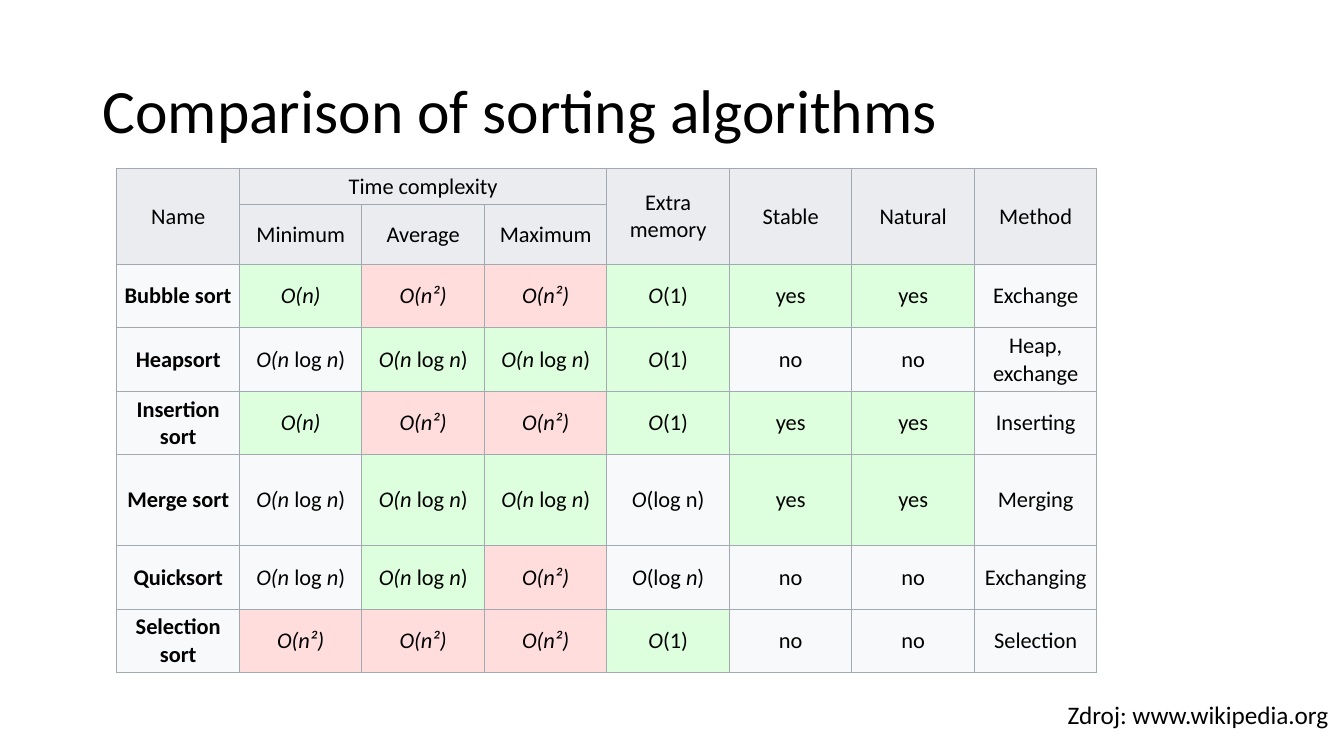
from dataclasses import dataclass

from lxml.etree import SubElement
from pptx import Presentation
from pptx.dml.color import RGBColor
from pptx.enum.text import MSO_ANCHOR as Anchor, PP_ALIGN as Align
from pptx.oxml.ns import qn
from pptx.slide import Slide
from pptx.table import Table, _Cell as Cell
from pptx.text.text import _Paragraph as Paragraph
from pptx.util import Inches, Pt

FONT = "Calibri"
BLACK = RGBColor(0x00, 0x00, 0x00)
BORDER = RGBColor(0xA2, 0xA9, 0xB1)
HEADER = RGBColor(0xEA, 0xEC, 0xF0)
PLAIN = RGBColor(0xF8, 0xF9, 0xFA)
GOOD = RGBColor(0xDD, 0xFF, 0xDD)
BAD = RGBColor(0xFF, 0xDD, 0xDD)

# Asterisks enclose italic text.
CONSTANT = "*O*(1)"
LINEAR = "*O(n)*"
LOGLINEAR = "*O(n* log *n*)"
QUADRATIC = "*O(n²)*"


@dataclass(frozen=True)
class Algorithm:
    name: str
    minimum: str
    average: str
    maximum: str
    memory: str
    stable: str
    natural: str
    method: str
    height: float = 0.63

    def entries(self) -> list[str]:
        return [self.name, self.minimum, self.average, self.maximum,
                self.memory, self.stable, self.natural, self.method]


@dataclass(frozen=True)
class Heading:
    text: str
    row: int
    column: int
    last_row: int
    last_column: int


ALGORITHMS = [
    Algorithm("Bubble sort", LINEAR, QUADRATIC, QUADRATIC, CONSTANT, "yes", "yes", "Exchange"),
    Algorithm("Heapsort", LOGLINEAR, LOGLINEAR, LOGLINEAR, CONSTANT, "no", "no", "Heap, exchange"),
    Algorithm("Insertion sort", LINEAR, QUADRATIC, QUADRATIC, CONSTANT, "yes", "yes", "Inserting"),
    Algorithm("Merge sort", LOGLINEAR, LOGLINEAR, LOGLINEAR, "*O*(log n)", "yes", "yes", "Merging", 0.9),
    Algorithm("Quicksort", LOGLINEAR, LOGLINEAR, QUADRATIC, "*O*(log *n*)", "no", "no", "Exchanging"),
    Algorithm("Selection sort", QUADRATIC, QUADRATIC, QUADRATIC, CONSTANT, "no", "no", "Selection"),
]
TALL_HEADINGS = {0: "Name", 4: "Extra memory", 5: "Stable", 6: "Natural", 7: "Method"}
HEADINGS = [Heading(text, 0, column, 1, column) for column, text in TALL_HEADINGS.items()]
HEADINGS += [Heading("Time complexity", 0, 1, 0, 3)]
HEADINGS += [Heading(text, 1, column, 1, column)
             for column, text in enumerate(("Minimum", "Average", "Maximum"), 1)]
HEADER_HEIGHTS = [0.36, 0.36]
COLUMN_COUNT = 8
TABLE_WIDTH = 9.72


def write_marked(paragraph: Paragraph, text: str, size: float, bold: bool = False) -> None:
    """Write text with the parts between asterisks in italics."""
    for index, part in enumerate(text.split("*")):
        if part:
            run = paragraph.add_run()
            run.text = part
            run.font.name, run.font.size = FONT, Pt(size)
            run.font.color.rgb = BLACK
            run.font.bold, run.font.italic = bold, index % 2 == 1


def format_cell(cell: Cell, fill: RGBColor) -> None:
    cell.vertical_anchor = Anchor.MIDDLE
    cell.margin_left = cell.margin_right = Inches(0.06)
    cell.margin_top = cell.margin_bottom = Inches(0.03)
    properties = cell._tc.get_or_add_tcPr()
    for side in ("lnL", "lnR", "lnT", "lnB"):
        line = SubElement(properties, qn(f"a:{side}"), w=str(Pt(0.75)))
        solid = SubElement(line, qn("a:solidFill"))
        SubElement(solid, qn("a:srgbClr"), val=str(BORDER))
    cell.fill.solid()
    cell.fill.fore_color.rgb = fill


def write_cell(cell: Cell, text: str, bold: bool = False) -> None:
    paragraph = cell.text_frame.paragraphs[0]
    paragraph.alignment = Align.CENTER
    write_marked(paragraph, text, 16, bold)


def rating(text: str, column: int) -> RGBColor:
    """Return the fill that rates a value; loglinear is no merit as a minimum."""
    if text == QUADRATIC:
        return BAD
    if text in (LINEAR, CONSTANT, "yes") or (text == LOGLINEAR and column > 1):
        return GOOD
    return PLAIN


def write_headings(table: Table) -> None:
    for row in range(len(HEADER_HEIGHTS)):
        for column in range(COLUMN_COUNT):
            format_cell(table.cell(row, column), HEADER)
    for heading in HEADINGS:
        cell = table.cell(heading.row, heading.column)
        last = table.cell(heading.last_row, heading.last_column)
        if (heading.row, heading.column) != (heading.last_row, heading.last_column):
            cell.merge(last)
        write_cell(cell, heading.text)


def add_comparison(slide: Slide) -> None:
    heights = HEADER_HEIGHTS + [algorithm.height for algorithm in ALGORITHMS]
    frame = slide.shapes.add_table(len(heights), COLUMN_COUNT, Inches(1.16), Inches(1.67),
                                   Inches(TABLE_WIDTH), Inches(sum(heights)))
    table = frame.table
    table.first_row = table.horz_banding = False
    for column in table.columns:
        column.width = Inches(TABLE_WIDTH / COLUMN_COUNT)
    for row, height in zip(table.rows, heights):
        row.height = Inches(height)
    write_headings(table)
    for row, algorithm in enumerate(ALGORITHMS, len(HEADER_HEIGHTS)):
        for column, text in enumerate(algorithm.entries()):
            cell = table.cell(row, column)
            format_cell(cell, rating(text, column))
            write_cell(cell, text, bold=column == 0)


def add_text(slide: Slide, text: str, box: tuple[float, float, float, float],
             size: float, wrap: bool) -> Paragraph:
    text_frame = slide.shapes.add_textbox(*map(Inches, box)).text_frame
    text_frame.word_wrap = wrap
    text_frame.vertical_anchor = Anchor.MIDDLE if wrap else Anchor.TOP
    paragraph = text_frame.paragraphs[0]
    write_marked(paragraph, text, size)
    return paragraph


def main() -> None:
    presentation = Presentation()
    presentation.slide_width, presentation.slide_height = Inches(13.33), Inches(7.5)
    slide = presentation.slides.add_slide(presentation.slide_layouts[6])
    title = add_text(slide, "Comparison of sorting algorithms", (0.92, 0.4, 11.5, 1.45), 44, True)
    title.line_spacing = 0.9
    add_comparison(slide)
    add_text(slide, "Zdroj: www.wikipedia.org", (10.49, 6.89, 2.82, 0.4), 18, False)
    presentation.save("out.pptx")


if __name__ == "__main__":
    main()
